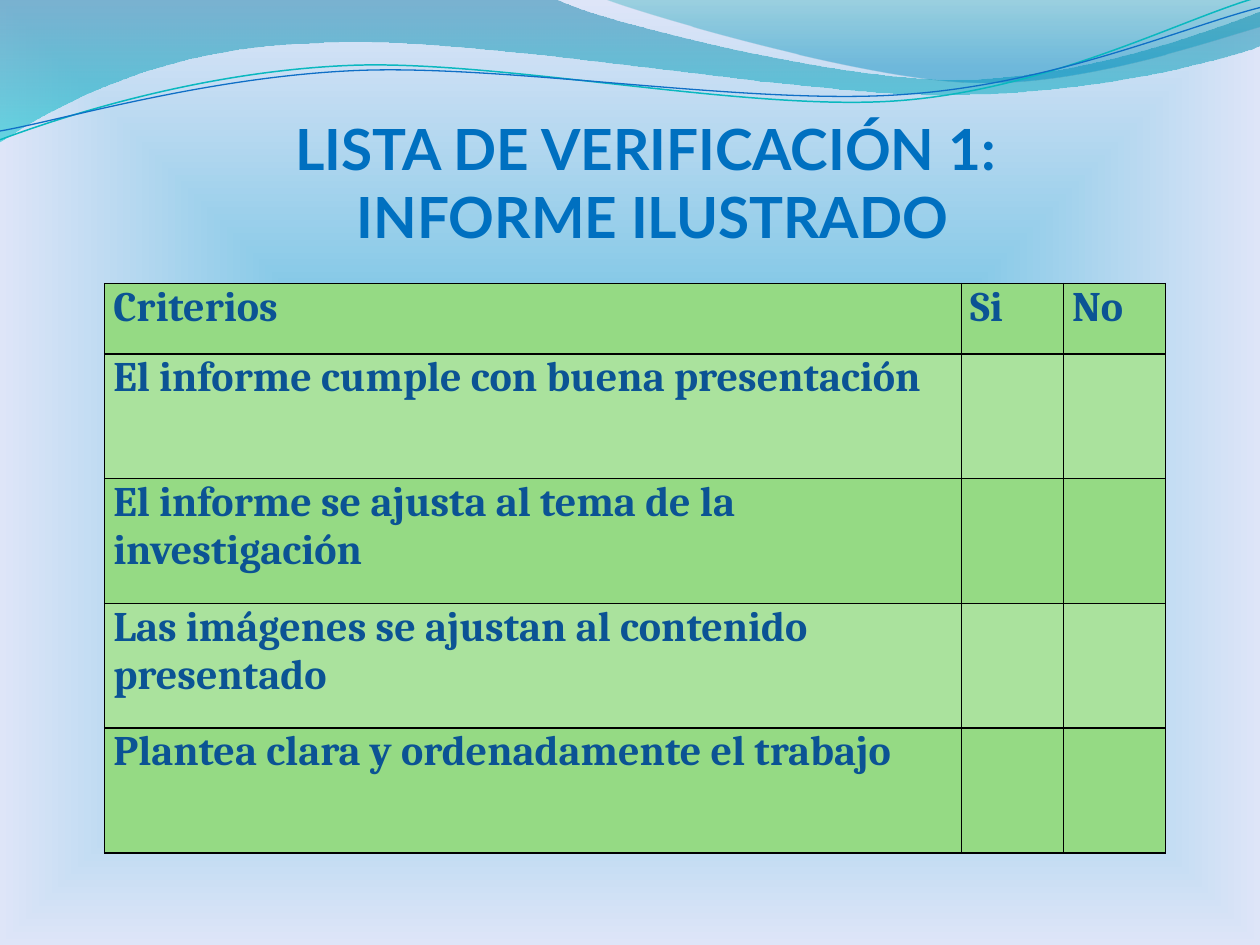
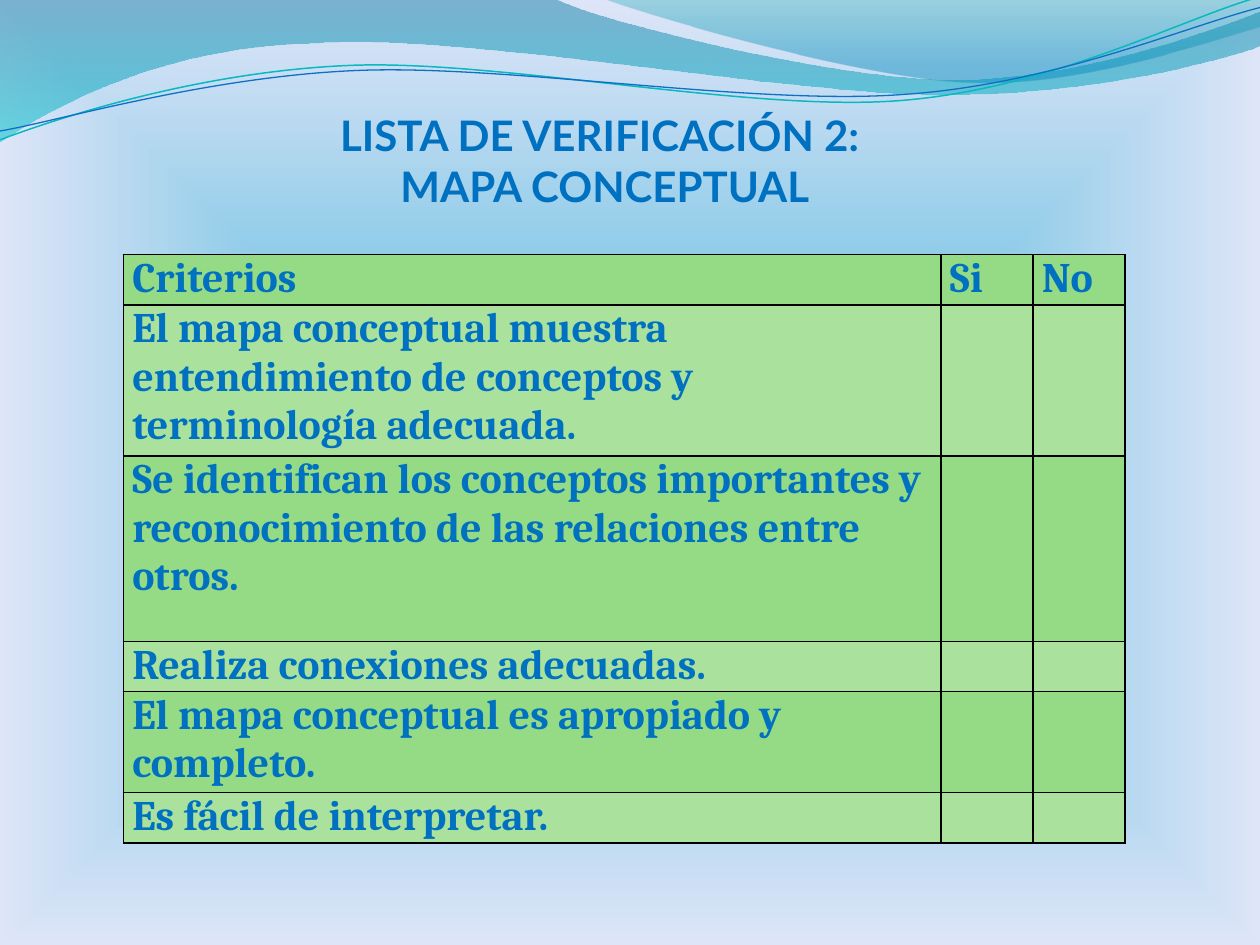
from copy import deepcopy
from dataclasses import dataclass

from lxml import etree
from pptx import Presentation
from pptx.dml.color import RGBColor
from pptx.enum.text import MSO_ANCHOR, MSO_AUTO_SIZE, PP_ALIGN
from pptx.oxml import parse_xml
from pptx.oxml.ns import nsdecls, qn
from pptx.util import Inches, Pt

CENTER = PP_ALIGN.CENTER
LEFT = PP_ALIGN.LEFT
JUSTIFY = PP_ALIGN.JUSTIFY
TOP = MSO_ANCHOR.TOP
BOTTOM = MSO_ANCHOR.BOTTOM
NO_AUTOFIT = MSO_AUTO_SIZE.NONE


@dataclass(frozen=True)
class Theme:
    """Colours, fonts and type sizes shared by the slides."""

    title_font: str = "Lato"
    table_font: str = "Cambria"
    accent: str = "0070C0"
    navy: str = "0B5394"
    band_dark: str = "95DA84"
    band_light: str = "AAE29D"
    border: str = "000000"
    large_title: float = 32.4
    small_title: float = 24
    table_size: float = 24
    backdrop: tuple = ((0, "07A1CD", 100), (26, "73C3E3", 100), (100, "DEE5F8", 100))


THEME = Theme()
CENTRE_GLOW = '<a:path path="shape"><a:fillToRect l="50000" t="50000" r="50000" b="50000"/></a:path>'
DOWNWARD = '<a:lin ang="5400000" scaled="0"/>'

WAVE_BANDS = [
    {
        "start": (0, 0),
        "segments": [
            [(4.4, -0.01)],
            [(4.76, 0.17), (6.64, 0.63), (7.58, 0.63)],
            [(8.53, 0.63), (9.58, 0.26), (10, 0.09)],
            [(10.01, 0.36)],
            [(9.83, 0.44), (8.7, 0.76), (7.46, 0.75)],
            [(6.22, 0.75), (3.82, 0.28), (2.57, 0.34)],
            [(1.29, 0.36), (0.46, 0.83), (-0.01, 1.13)],
        ],
        "stops": ((0, "0074A1", 45), (100, "00C6CF", 55)),
    },
    {
        "start": (4.79, -0.01),
        "segments": [
            [(5.09, 0.11), (6.82, 0.62), (7.69, 0.65)],
            [(8.56, 0.69), (9.61, 0.32), (10, 0.21)],
            [(10, 0)],
        ],
        "stops": ((0, "00A1A9", 30), (80, "008BBF", 45)),
    },
]

WAVE_LINES = [
    {
        "start": (0, 1.11),
        "segments": [
            [(0.48, 0.93), (1.58, 0.57), (2.77, 0.52)],
            [(3.95, 0.47), (5.93, 0.89), (7.13, 0.8)],
            [(8.33, 0.71), (9.38, 0.15), (9.98, -0.02)],
        ],
        "color": "0AB8BF",
        "width": 0.85,
    },
    {
        "start": (0, 1.04),
        "segments": [
            [(0.47, 0.96), (1.64, 0.61), (2.83, 0.56)],
            [(4.03, 0.51), (5.97, 0.84), (7.17, 0.75)],
            [(8.36, 0.67), (9.41, 0.21), (10, 0.06)],
        ],
        "color": "0F6FC6",
        "width": 0.75,
    },
]

CHECKLISTS = [
    {
        "title": {
            "text": "LISTA DE VERIFICACIÓN 1:\v INFORME ILUSTRADO",
            "area": (0.75, 1.39, 8.75, 1.34),
            "size": THEME.large_title,
            "frame": {"vertical_anchor": BOTTOM, "margin_left": 0, "margin_right": 0,
                      "margin_top": Inches(0.05), "margin_bottom": Inches(0.75)},
        },
        "table": {
            "corner": (0.83, 2.25),
            "columns": [6.8, 0.81, 0.81],
            "rows": [0.56] + [0.99] * 4,
            "color": THEME.navy,
            "spacing": 0,
            "header_alignment": LEFT,
            "criteria": [
                "El informe cumple con buena presentación",
                "El informe se ajusta al tema de la investigación",
                "Las imágenes se ajustan al contenido presentado",
                "Plantea clara y ordenadamente el trabajo",
            ],
        },
    },
    {
        "title": {
            "text": "LISTA DE VERIFICACIÓN 2:\n MAPA CONCEPTUAL",
            "area": (1.61, 0.82, 6.3, 0.91),
            "size": THEME.small_title,
            "frame": {"vertical_anchor": TOP},
        },
        "table": {
            "corner": (0.98, 2.02),
            "columns": [6.49, 0.73, 0.73],
            "rows": [0.4, 1.2, 1.47, 0.4, 0.8, 0.4],
            "color": THEME.accent,
            "spacing": 1,
            "header_alignment": JUSTIFY,
            "criteria": [
                "El mapa conceptual muestra entendimiento de conceptos y terminología adecuada.",
                "Se identifican los conceptos importantes y reconocimiento de las relaciones entre otros.",
                "Realiza conexiones adecuadas.",
                "El mapa conceptual es apropiado y completo.",
                "Es fácil de interpretar.",
            ],
        },
    },
]


def set_attributes(target, values):
    """Set each named attribute on the target."""
    for name, value in values.items():
        setattr(target, name, value)


def style_paragraph(para, font, color, paragraph_format):
    """Format a paragraph and all its runs."""
    set_attributes(para, paragraph_format)
    for span in para.runs:
        set_attributes(span.font, font)
        span.font.color.rgb = RGBColor.from_string(color)


def set_gradient(element, stops, direction):
    """Replace the first solid fill in an element by a gradient."""
    gradient = parse_xml(f'<a:gradFill {nsdecls("a")} rotWithShape="1"><a:gsLst/>{direction}</a:gradFill>')
    for position, color, opacity in stops:
        stop = etree.SubElement(gradient[0], qn("a:gs"), pos=str(position * 1000))
        swatch = etree.SubElement(stop, qn("a:srgbClr"), val=color)
        if opacity < 100:
            etree.SubElement(swatch, qn("a:alpha"), val=str(opacity * 1000))
    solid = next(element.iter(qn("a:solidFill")))
    solid.getparent().replace(solid, gradient)


def bend_segments(shape, segments):
    """Turn the straight segments that have control points into cubic curves."""
    lines = list(shape.element.iter(qn("a:lnTo")))
    for line, segment in zip(lines, segments):
        if len(segment) == 3:
            curve = etree.Element(qn("a:cubicBezTo"))
            for x, y in segment:
                etree.SubElement(curve, qn("a:pt"), x=str(Inches(x) - shape.left),
                                 y=str(Inches(y) - shape.top))
            line.getparent().replace(line, curve)


def add_outline(page, wave, close):
    """Draw one wave outline without a shadow."""
    builder = page.shapes.build_freeform(*map(Inches, wave["start"]))
    ends = [tuple(map(Inches, segment[-1])) for segment in wave["segments"]]
    builder.add_line_segments(ends, close=close)
    shape = builder.convert_to_shape()
    bend_segments(shape, wave["segments"])
    shape.shadow.inherit = False
    return shape


def add_wave_band(page, wave):
    """Draw a translucent gradient band."""
    shape = add_outline(page, wave, True)
    shape.line.fill.background()
    shape.fill.solid()
    set_gradient(shape.element, wave["stops"], DOWNWARD)
    return shape


def add_wave_line(page, wave):
    """Draw a thin curved line."""
    shape = add_outline(page, wave, False)
    shape.fill.background()
    shape.line.color.rgb = RGBColor.from_string(wave["color"])
    shape.line.width = Pt(wave["width"])
    return shape


def decorate_master(master, page):
    """Give the master its glow and move the waves drawn on a page to it."""
    master.background.fill.solid()
    set_gradient(master.element, THEME.backdrop, CENTRE_GLOW)
    waves = [add_wave_band(page, wave) for wave in WAVE_BANDS]
    waves += [add_wave_line(page, wave) for wave in WAVE_LINES]
    for index, shape in enumerate(waves):
        next(shape.element.iter(qn("p:cNvPr"))).set("id", str(100 + index))
        master.shapes.element.insert(2 + index, shape.element)


def fill_title(page, text, area, size, frame):
    """Place and format the title placeholder."""
    box = page.shapes.title
    set_attributes(box, dict(zip(("left", "top", "width", "height"), map(Inches, area))))
    body = box.text_frame
    body.text = text
    set_attributes(body, {"word_wrap": True, "auto_size": NO_AUTOFIT, **frame})
    font = {"name": THEME.title_font, "size": Pt(size), "bold": True}
    for para in body.paragraphs:
        style_paragraph(para, font, THEME.accent, {"alignment": CENTER})
    for line_break in box.element.iter(qn("a:br")):
        line_break.append(deepcopy(next(box.element.iter(qn("a:rPr")))))


def add_borders(frame):
    """Rule every cell of a table on all four sides."""
    for properties in frame.element.iter(qn("a:tcPr")):
        for index, side in enumerate(("lnL", "lnR", "lnT", "lnB")):
            properties.insert(index, parse_xml(
                f'<a:{side} {nsdecls("a")} w="12700"><a:solidFill>'
                f'<a:srgbClr val="{THEME.border}"/></a:solidFill></a:{side}>'))


def add_checklist(page, corner, columns, rows, color, spacing, header_alignment, criteria):
    """Add a banded table of criteria with yes and no columns."""
    size = (sum(columns), sum(rows))
    frame = page.shapes.add_table(len(rows), len(columns), *map(Inches, corner + size))
    table = frame.table
    for column, width in zip(table.columns, columns):
        column.width = Inches(width)
    for row, height in zip(table.rows, rows):
        row.height = Inches(height)
    margins = {"margin_left": Inches(0.07), "margin_right": Inches(0.07),
               "margin_top": 0, "margin_bottom": 0}
    font = {"name": THEME.table_font, "size": Pt(THEME.table_size), "bold": True}
    gaps = {"space_before": Pt(spacing), "space_after": Pt(spacing)}
    lines = [["Criterios", "Si", "No"]] + [[criterion, "", ""] for criterion in criteria]
    for row_index, line in enumerate(lines):
        band = THEME.band_light if row_index % 2 else THEME.band_dark
        alignment = LEFT if row_index else header_alignment
        for column_index, words in enumerate(line):
            cell = table.cell(row_index, column_index)
            set_attributes(cell, margins)
            cell.fill.solid()
            cell.fill.fore_color.rgb = RGBColor.from_string(band)
            if words:
                cell.text = words
                style_paragraph(cell.text_frame.paragraphs[0], font, color,
                                {"alignment": alignment, **gaps})
    add_borders(frame)


def main():
    """Build the checklist slides and save the deck."""
    deck = Presentation()
    deck.slide_width, deck.slide_height = Inches(10), Inches(7.5)
    title_only = deck.slide_layouts[5]
    pages = [deck.slides.add_slide(title_only) for _ in CHECKLISTS]
    decorate_master(deck.slide_master, pages[0])
    for page, checklist in zip(pages, CHECKLISTS):
        fill_title(page, **checklist["title"])
        add_checklist(page, **checklist["table"])
    deck.save("out.pptx")


if __name__ == "__main__":
    main()
